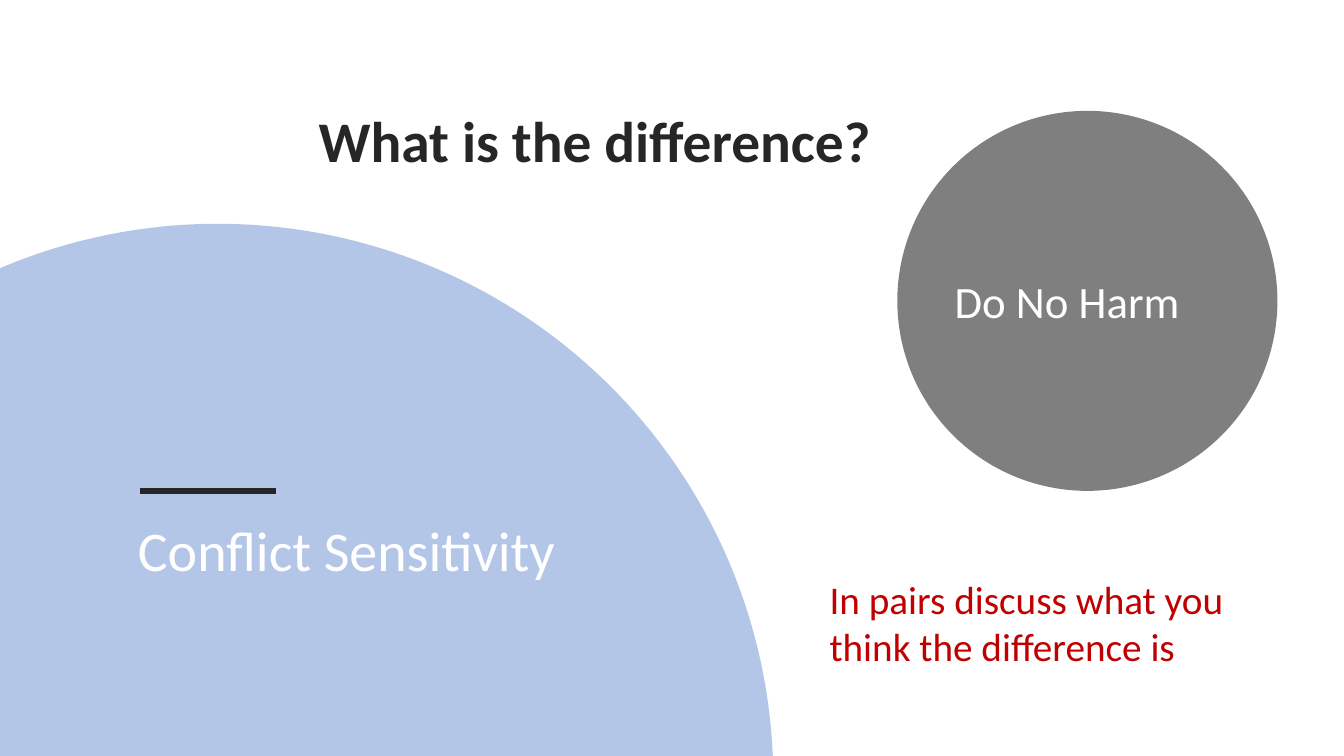
from math import acos, asin, cos, pi, sin

from lxml import etree
from pptx import Presentation
from pptx.dml.color import RGBColor
from pptx.enum.shapes import MSO_CONNECTOR as Connector, MSO_SHAPE as Shape
from pptx.enum.text import MSO_ANCHOR as Anchor, MSO_AUTO_SIZE as AutoSize, PP_ALIGN as Align
from pptx.oxml.ns import qn
from pptx.util import Inches, Pt

PX = Inches(0.01)
WIDTH, HEIGHT = 1333, 750
FONT = "Calibri"
COLORS = {
    "blue": "4472C4",
    "black": "000000",
    "ink": "262626",
    "white": "FFFFFF",
    "red": "C00000",
}


def emu(*lengths):
    return [int(length * PX) for length in lengths]


def fill_shape(shape, color, opacity):
    shape.shadow.inherit = False
    shape.line.fill.background()
    shape.fill.solid()
    shape.fill.fore_color.rgb = RGBColor.from_string(COLORS[color])
    color_node = shape.fill._xPr.find(qn("a:solidFill"))[0]
    etree.SubElement(color_node, qn("a:alpha")).set("val", str(opacity * 1000))


def write_text(shape, text, size, color, bold=False, spacing=0.9, before=10, anchor=Anchor.TOP):
    frame = shape.text_frame
    frame.word_wrap = True
    frame.auto_size = AutoSize.NONE
    frame.vertical_anchor = anchor
    frame.text = text
    paragraph = frame.paragraphs[0]
    paragraph.alignment = Align.LEFT
    paragraph.line_spacing = spacing
    paragraph.space_before = Pt(before)
    font = paragraph.font
    font.name, font.size, font.bold = FONT, Pt(size), bold
    font.color.rgb = RGBColor.from_string(COLORS[color])


def add_text(slide, box, text, size, color, **options):
    write_text(slide.shapes.add_textbox(*emu(*box)), text, size, color, **options)


def add_title(slide, box, text):
    title = slide.shapes.title
    title.left, title.top, title.width, title.height = emu(*box)
    write_text(title, text, 41, "ink", bold=True, before=0, anchor=Anchor.BOTTOM)


def add_conflict_sensitivity(slide, center_x, center_y, radius):
    # Large disc, cut off by the left and bottom edges of the slide
    start = pi - acos(center_x / radius)
    end = asin((center_y - HEIGHT) / radius)
    steps = 120
    angles = [start + (end - start) * step / steps for step in range(steps + 1)]
    arc = [(center_x + radius * cos(a), center_y - radius * sin(a)) for a in angles]
    builder = slide.shapes.build_freeform(0, HEIGHT * PX, scale=1.0)
    builder.add_line_segments([emu(*point) for point in arc], close=False)
    builder.add_line_segments([emu(arc[-1][0], HEIGHT)], close=True)
    fill_shape(builder.convert_to_shape(), "blue", 40)

    # Caption and the rule above it
    left, top = center_x - 89, center_y - 259
    add_text(slide, (left, top, 574, 181), "Conflict Sensitivity", 40, "white")
    rule = slide.shapes.add_connector(
        Connector.STRAIGHT, *emu(left + 12, top - 27, left + 147, top - 27))
    rule.line.color.rgb = RGBColor.from_string(COLORS["ink"])
    rule.line.width = Pt(4)
    etree.SubElement(rule._element.spPr, qn("a:effectLst"))


def add_do_no_harm(slide, left, top, diameter):
    disc = slide.shapes.add_shape(Shape.OVAL, *emu(left, top, diameter, diameter))
    fill_shape(disc, "black", 50)
    add_text(slide, (left + 47, top + 163, 305, 169), "Do No Harm", 32, "white")


def add_task(slide, box):
    add_text(slide, box, "In pairs discuss what you think the difference is",
             28, "red", spacing=1.0, before=0)


def main():
    presentation = Presentation()
    presentation.slide_width, presentation.slide_height = Inches(13.33), Inches(7.5)
    slide = presentation.slides.add_slide(presentation.slide_layouts[5])
    add_title(slide, (306, 79, 693, 100), "What is the difference?")
    add_conflict_sensitivity(slide, 216, 773, 551)
    add_do_no_harm(slide, 890, 110, 377)
    add_task(slide, (813, 566, 473, 104))
    presentation.save("out.pptx")


if __name__ == "__main__":
    main()
